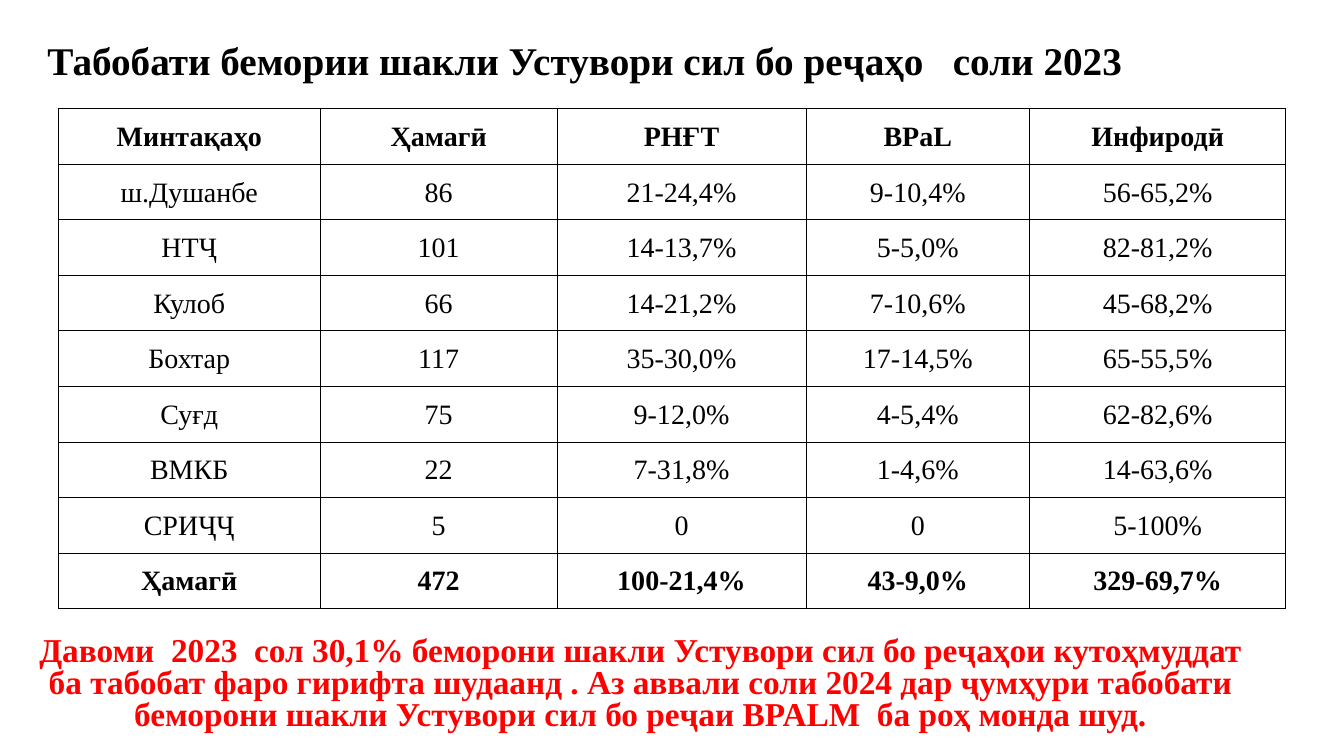
"""Build the slide on tuberculosis treatment regimens by region in 2023."""
from dataclasses import dataclass

from lxml.etree import SubElement
from pptx import Presentation
from pptx.dml.color import RGBColor
from pptx.enum.text import MSO_ANCHOR as Anchor, MSO_AUTO_SIZE as AutoSize, PP_ALIGN as Align
from pptx.oxml.ns import qn
from pptx.util import Cm, Pt

BLACK = RGBColor(0x00, 0x00, 0x00)
WHITE = RGBColor(0xFF, 0xFF, 0xFF)
RED = RGBColor(0xFF, 0x00, 0x00)
FONT = "Times New Roman"
BORDER_WIDTH = Pt(0.5)
ROW_HEIGHT = 1.4
COLUMN_WIDTHS = (6.6, 5.97, 6.27, 5.64, 6.45)
CELL_FORMAT = {
    "vertical_anchor": Anchor.MIDDLE,
    "margin_left": Cm(0.03),
    "margin_right": Cm(0.03),
    "margin_top": Cm(0.03),
    "margin_bottom": 0,
}
REGIMENS = (
    ("Минтақаҳо", "Ҳамагӣ", "РНҒТ", "BPaL", "Инфиродӣ"),
    ("ш.Душанбе", "86", "21-24,4%", "9-10,4%", "56-65,2%"),
    ("НТҶ", "101", "14-13,7%", "5-5,0%", "82-81,2%"),
    ("Кулоб", "66", "14-21,2%", "7-10,6%", "45-68,2%"),
    ("Бохтар", "117", "35-30,0%", "17-14,5%", "65-55,5%"),
    ("Суғд", "75", "9-12,0%", "4-5,4%", "62-82,6%"),
    ("ВМКБ", "22", "7-31,8%", "1-4,6%", "14-63,6%"),
    ("СРИҶҶ", "5", "0", "0", "5-100%"),
    ("Ҳамагӣ", "472", "100-21,4%", "43-9,0%", "329-69,7%"),
)


@dataclass(frozen=True)
class TextBlock:
    """Wording, place in centimetres and format of a text shape."""

    text: str
    left: float
    top: float
    width: float
    height: float
    size: float
    color: RGBColor
    align: Align
    spacing: float


TITLE = TextBlock(
    "Табобати бемории шакли Устувори сил бо реҷаҳо   соли 2023",
    0.94, 0.71, 31.24, 1.75, 28, BLACK, Align.LEFT, 0.9,
)
CONCLUSION = TextBlock(
    "Давоми  2023  сол 30,1% беморони шакли Устувори сил бо реҷаҳои кутоҳмуддат "
    "ба табобат фаро гирифта шудаанд . Аз аввали соли 2024 дар ҷумҳури табобати "
    "беморони шакли Устувори сил бо реҷаи BPALM  ба роҳ монда шуд.",
    0.51, 15.7, 31.24, 3.1, 23.8, RED, Align.CENTER, 0.8,
)


def set_format(target, values: dict) -> None:
    """Set each named attribute of the target."""
    for name, value in values.items():
        setattr(target, name, value)


def write(p, text: str, size: float, color: RGBColor, bold: bool, align: Align) -> None:
    """Write one formatted run into a paragraph."""
    p.alignment = align
    r = p.add_run()
    r.text = text
    set_format(r.font, {"name": FONT, "size": Pt(size), "bold": bold})
    r.font.color.rgb = color


def fill_text(sp, block: TextBlock) -> None:
    """Place a text shape and write its block."""
    set_format(sp, {name: Cm(getattr(block, name)) for name in ("left", "top", "width", "height")})
    tf = sp.text_frame
    set_format(tf, {"word_wrap": True, "auto_size": AutoSize.NONE, "vertical_anchor": Anchor.MIDDLE})
    p = tf.paragraphs[0]
    p.line_spacing = block.spacing
    write(p, block.text, block.size, block.color, True, block.align)


def add_borders(cell) -> None:
    """Draw a thin black line on each side of a cell."""
    properties = cell._tc.get_or_add_tcPr()
    for index, side in enumerate(("lnL", "lnR", "lnT", "lnB")):
        line = SubElement(properties, qn(f"a:{side}"), w=str(BORDER_WIDTH))
        properties.insert(index, line)
        fill = SubElement(line, qn("a:solidFill"))
        SubElement(fill, qn("a:srgbClr"), val=str(BLACK))


def add_regimen_table(s) -> None:
    """Add the table of regimens by region."""
    rows, cols = len(REGIMENS), len(COLUMN_WIDTHS)
    table = s.shapes.add_table(
        rows, cols, Cm(1.47), Cm(2.74), Cm(sum(COLUMN_WIDTHS)), Cm(ROW_HEIGHT * rows)
    ).table
    table.horz_banding = False
    for column, width in zip(table.columns, COLUMN_WIDTHS):
        column.width = Cm(width)
    for i, values in enumerate(REGIMENS):
        table.rows[i].height = Cm(ROW_HEIGHT)
        for j, text in enumerate(values):
            cell = table.cell(i, j)
            set_format(cell, CELL_FORMAT)
            cell.fill.solid()
            cell.fill.fore_color.rgb = WHITE
            add_borders(cell)
            write(cell.text_frame.paragraphs[0], text, 20, BLACK, i in (0, rows - 1), Align.CENTER)


def main() -> None:
    """Build and save the slide."""
    prs = Presentation()
    set_format(prs, {"slide_width": Cm(33.87), "slide_height": Cm(19.05)})
    s = prs.slides.add_slide(prs.slide_layouts[5])
    fill_text(s.shapes.title, TITLE)
    add_regimen_table(s)
    fill_text(s.shapes.add_textbox(0, 0, 0, 0), CONCLUSION)
    prs.save("out.pptx")


if __name__ == "__main__":
    main()
